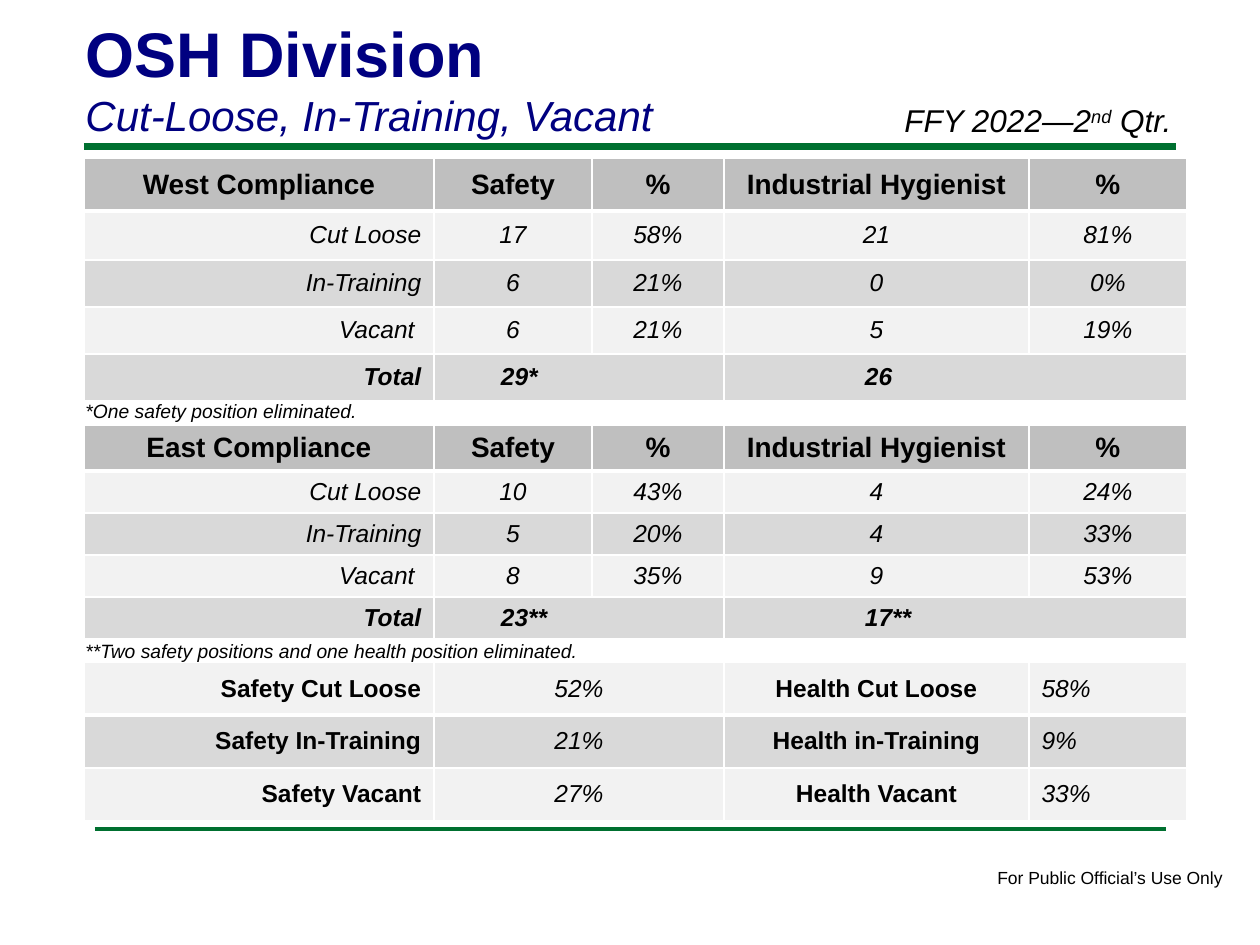
from dataclasses import dataclass

from lxml import etree
from pptx import Presentation
from pptx.dml.color import RGBColor
from pptx.enum.shapes import MSO_CONNECTOR
from pptx.enum.text import MSO_ANCHOR, MSO_AUTO_SIZE, PP_ALIGN
from pptx.oxml.ns import qn
from pptx.util import Emu, Pt

LEFT, CENTER, RIGHT = PP_ALIGN.LEFT, PP_ALIGN.CENTER, PP_ALIGN.RIGHT
MIDDLE = MSO_ANCHOR.MIDDLE
FIT_TEXT = MSO_AUTO_SIZE.SHAPE_TO_FIT_TEXT
STRAIGHT = MSO_CONNECTOR.STRAIGHT

SCALE = 914400 / 126  # EMU in one px
COLORS = {"navy": "000080", "green": "007030", "black": "000000", "white": "FFFFFF",
          "header": "BFBFBF", "light": "F2F2F2", "dark": "D9D9D9"}
FORMATS = {
    "title": {"size": Pt(36), "bold": True, "italic": False},
    "subtitle": {"size": Pt(24), "bold": False, "italic": True},
    "quarter": {"size": Pt(18), "bold": False, "italic": True},
    "footnote": {"size": Pt(11), "bold": False, "italic": True},
    "footer": {"size": Pt(10), "bold": False, "italic": False},
    "header": {"size": Pt(16), "bold": True, "italic": False},
    "value": {"size": Pt(14), "bold": False, "italic": True},
    "total": {"size": Pt(14), "bold": True, "italic": True},
    "label": {"size": Pt(14), "bold": True, "italic": False},
}
TABLE_LEFT = 84
TOTAL_INDENTS = {1: 67, 3: 141}  # left margins of the merged totals


@dataclass
class Run:
    text: str
    style: str
    color: str = "black"
    superscript: bool = False


@dataclass
class TextBox:
    box: tuple[int, int, int, int]
    paragraphs: list[list[Run]]
    wrap: bool = False


@dataclass
class Rule:
    left: int
    right: int
    y: int
    weight: int


@dataclass
class Grid:
    top: int
    columns: list[int]
    heights: list[int]
    rows: list[list[str]]


def px(length: int) -> Emu:
    return Emu(round(length * SCALE))


def rgb(name: str) -> RGBColor:
    return RGBColor.from_string(COLORS[name])


def add_run(paragraph, item: Run) -> None:
    run = paragraph.add_run()
    run.text = item.text
    for name, value in FORMATS[item.style].items():
        setattr(run.font, name, value)
    run.font.name = "Arial"
    run.font.color.rgb = rgb(item.color)
    if item.superscript:
        run._r.get_or_add_rPr().set("baseline", "30000")


def add_text(slide, item: TextBox) -> None:
    frame = slide.shapes.add_textbox(*map(px, item.box)).text_frame
    frame.word_wrap = item.wrap
    frame.auto_size = FIT_TEXT
    for index, runs in enumerate(item.paragraphs):
        paragraph = frame.add_paragraph() if index else frame.paragraphs[0]
        for run in runs:
            add_run(paragraph, run)


def add_rule(slide, rule: Rule) -> None:
    line = slide.shapes.add_connector(
        STRAIGHT, px(rule.left), px(rule.y), px(rule.right), px(rule.y))
    line.line.color.rgb = rgb("green")
    line.line.width = Pt(rule.weight)
    etree.SubElement(line._element.spPr, qn("a:effectLst"))


def paint_cell(cell, fill: str, top: int, bottom: int) -> None:
    """White borders first, then the fill, as the schema orders them."""
    properties = cell._tc.get_or_add_tcPr()
    for side, weight in {"L": 1, "R": 1, "T": top, "B": bottom}.items():
        border = etree.SubElement(properties, qn(f"a:ln{side}"), w=str(Pt(weight)))
        solid = etree.SubElement(border, qn("a:solidFill"))
        etree.SubElement(solid, qn("a:srgbClr"), val=COLORS["white"])
    cell.fill.solid()
    cell.fill.fore_color.rgb = rgb(fill)
    cell.vertical_anchor = MIDDLE


def add_grid(slide, grid: Grid):
    table = slide.shapes.add_table(
        len(grid.rows), len(grid.columns), px(TABLE_LEFT), px(grid.top),
        px(sum(grid.columns)), px(sum(grid.heights))).table
    table.horz_banding = False
    for column, width in zip(table.columns, grid.columns):
        column.width = px(width)
    for row, height in zip(table.rows, grid.heights):
        row.height = px(height)
    return table


def fill_cell(cell, text: str, style: str, alignment) -> None:
    paragraph = cell.text_frame.paragraphs[0]
    paragraph.alignment = alignment
    if text:
        add_run(paragraph, Run(text, style))


def add_compliance(slide, grid: Grid) -> None:
    """Header, three counted rows and a total over merged pairs of cells."""
    table = add_grid(slide, grid)
    last = len(grid.rows) - 1
    for r, row in enumerate(grid.rows):
        style = {0: "header", last: "total"}.get(r, "value")
        fill = "header" if r == 0 else "light" if r % 2 else "dark"
        for c, text in enumerate(row):
            cell = table.cell(r, c)
            paint_cell(cell, fill, 3 if r == 1 else 1, 3 if r == 0 else 1)
            alignment = RIGHT if r and c == 0 else CENTER
            if r == last and c in TOTAL_INDENTS:
                alignment = LEFT
                cell.margin_left = px(TOTAL_INDENTS[c])
                cell.merge(table.cell(r, c + 1))
            fill_cell(cell, text, style, alignment)


def add_summary(slide, grid: Grid) -> None:
    """Pairs of a bold label and an italic percentage."""
    table = add_grid(slide, grid)
    alignments = (RIGHT, CENTER, CENTER, LEFT)
    for r, row in enumerate(grid.rows):
        for c, text in enumerate(row):
            cell = table.cell(r, c)
            paint_cell(cell, "dark" if r % 2 else "light",
                       3 if r == 1 else 1, 3 if r == 0 else 1)
            fill_cell(cell, text, "value" if c % 2 else "label", alignments[c])


RULES = [Rule(84, 1176, 147, 4), Rule(95, 1166, 829, 2)]
TEXTS = [
    TextBox((985, 861, 253, 34), [[Run("For Public Official’s Use Only", "footer")]]),
    TextBox((73, 8, 1040, 140), [
        [Run("OSH Division", "title", "navy")],
        [Run("Cut-Loose, In-Training, Vacant", "subtitle", "navy")]], wrap=True),
    TextBox((892, 95, 315, 50), [[
        Run("FFY 2022—2", "quarter"), Run("nd", "quarter", superscript=True),
        Run(" Qtr.", "quarter")]], wrap=True),
    TextBox((73, 393, 304, 37), [[Run("*One safety position eliminated.", "footnote")]]),
    TextBox((73, 633, 528, 37), [[Run(
        "**Two safety positions and one health position eliminated.", "footnote")]]),
]
COLUMNS = [350, 158, 132, 305, 158]
HEADINGS = ["Safety", "%", "Industrial Hygienist", "%"]
COMPLIANCE = [
    Grid(158, COLUMNS, [53, 49, 47, 47, 47], [
        ["West Compliance", *HEADINGS],
        ["Cut Loose", "17", "58%", "21", "81%"],
        ["In-Training", "6", "21%", "0", "0%"],
        ["Vacant ", "6", "21%", "5", "19%"],
        ["Total", "29*", "", "26", ""]]),
    Grid(425, COLUMNS, [46, 42, 42, 42, 42], [
        ["East Compliance", *HEADINGS],
        ["Cut Loose", "10", "43%", "4", "24%"],
        ["In-Training", "5", "20%", "4", "33%"],
        ["Vacant ", "8", "35%", "9", "53%"],
        ["Total", "23**", "", "17**", ""]]),
]
SUMMARY = Grid(662, [350, 290, 305, 158], [53] * 3, [
    ["Safety Cut Loose", "52%", "Health Cut Loose", "58%"],
    ["Safety In-Training", "21%", "Health in-Training", "9%"],
    ["Safety Vacant", "27%", "Health Vacant", "33%"]])


def main() -> None:
    presentation = Presentation()
    presentation.slide_width, presentation.slide_height = px(1260), px(945)
    slide = presentation.slides.add_slide(presentation.slide_layouts[6])
    # Rules under the title and above the footer
    for rule in RULES:
        add_rule(slide, rule)
    # Tables
    for grid in COMPLIANCE:
        add_compliance(slide, grid)
    add_summary(slide, SUMMARY)
    # Title, quarter, footnotes and footer
    for item in TEXTS:
        add_text(slide, item)
    presentation.save("out.pptx")


if __name__ == "__main__":
    main()
